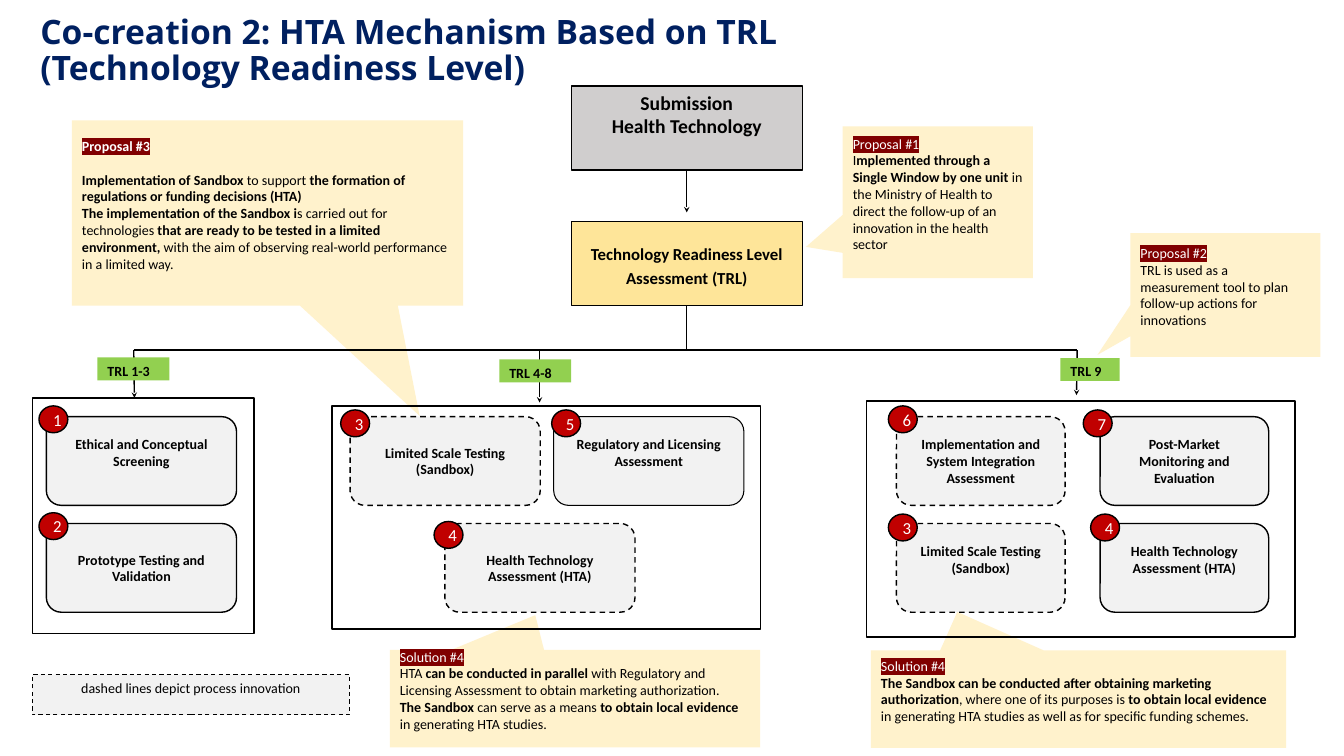
from lxml import etree
from pptx import Presentation, util as u
from pptx.dml.color import RGBColor
from pptx.enum import dml, shapes, text
from pptx.oxml import ns

W, H = 20, 11.25
KIND, MID, TOP = shapes.MSO_SHAPE, text.MSO_ANCHOR.MIDDLE, text.MSO_ANCHOR.TOP
LEFT, MIDX = text.PP_ALIGN.LEFT, text.PP_ALIGN.CENTER
INK, WHITE, NAVY, GREY = "000000", "FFFFFF", "002060", "F2F2F2"
CREAM, MAROON, RED, GREEN = "FFF2CC", "800000", "C00000", "92D050"
PADX, PADY, LINE = 0.15, 0.07, 0.25  # LINE: height of one 15 pt line

TITLE = "Co-creation 2: HTA Mechanism Based on TRL (Technology Readiness Level)"

# Text between ** marks is bold.
# heading, body, place, pointer, gap under the heading
NOTES = [
    ("Proposal #1",
     ["I**mplemented through a Single Window by one unit **in the Ministry of Health "
      "to direct the follow-up of an innovation in the health sector"],
     (12.54, 1.88, 2.83, 2.26), (-0.693, 0.294), 0),
    ("Solution #4",
     ["**The Sandbox can be conducted after obtaining marketing authorization**, where one "
      "of its purposes is **to obtain local evidence** in generating HTA studies as well as "
      "for specific funding schemes."],
     (12.96, 9.68, 6.18, 1.45), (-0.292, -0.896), 0),
    ("**Proposal #3**",
     ["**Implementation of Sandbox **to support** the formation of regulations or funding "
      "decisions (HTA)**",
      "**The implementation of the Sandbox i**s carried out for technologies** that are ready "
      "to be tested in a limited environment, **with the aim of observing real-world "
      "performance in a limited way."],
     (1.07, 1.79, 5.82, 2.76), (0.389, 1.094), 18),
    ("Solution #4",
     ["HTA **can be conducted in parallel** with Regulatory and Licensing Assessment to "
      "obtain marketing authorization.",
      "**The Sandbox **can serve as a means **to obtain local evidence** in generating "
      "HTA studies."],
     (5.8, 9.67, 5.51, 1.45), (-0.107, -0.856), 0),
    ("Proposal #2",
     ["TRL is used as a measurement tool to plan follow-up actions for innovations"],
     (16.82, 3.47, 2.83, 1.84), (-0.673, 0.485), 0),
]

# label, tag place, frame, card width, cards
# card: number, wording, column x, row, dashed, lifted by half a line, badge place
STAGES = [
    ("TRL 1-3", (1.45, 5.32, 1.07), (0.48, 5.92, 3.3, 3.51), 2.83, [
        (1, "Ethical and Conceptual Screening", 0.69, 0, False, True, (0.58, 6.04)),
        (2, "Prototype Testing and Validation", 0.69, 1, False, False, (0.58, 7.63))]),
    ("TRL 4-8", (7.43, 5.35, 1.07), (4.94, 6.04, 6.38, 3.32), 2.83, [
        (3, "Limited Scale Testing (Sandbox)", 5.21, 0, True, False, (5.07, 6.1)),
        (5, "Regulatory and Licensing Assessment", 8.24, 0, False, True, (8.21, 6.1)),
        (4, "Health Technology Assessment (HTA)", 6.62, 1, True, False, (6.46, 7.76))]),
    ("TRL 9", (15.78, 5.33, 0.88), (12.89, 5.97, 6.38, 3.51), 2.51, [
        (6, "Implementation and System Integration Assessment", 13.34, 0, True, False,
         (13.22, 6.04)),
        (7, "Post-Market Monitoring and Evaluation", 16.37, 0, False, False, (16.12, 6.1)),
        (3, "Limited Scale Testing (Sandbox)", 13.34, 1, True, True, (13.22, 7.65)),
        (4, "Health Technology Assessment (HTA)", 16.37, 1, False, True, (16.23, 7.65))]),
]
ROWS = (6.2, 7.79)

STEM, BUS = 10.22, 5.21
# start, end, arrow
LINES = [
    ((STEM, 2.53), (STEM, 3.16), True),
    ((STEM, 4.55), (STEM, BUS), False),
    ((1.99, BUS), (16.03, BUS), False),
    ((1.99, BUS), (2, 5.92), True),
    ((8.03, BUS), (8.03, 5.99), True),
    ((16.03, BUS), (16.02, 5.88), True),
]

deck = Presentation()
deck.slide_width, deck.slide_height = u.Inches(W), u.Inches(H)
slide = deck.slides.add_slide(deck.slide_layouts[5])


def paint(target, shade):
    target.solid()
    target.fore_color.rgb = RGBColor.from_string(shade)


def assign(item, values):
    for name, value in values.items():
        setattr(item, name, value)


def write(frame, lines, size=15, color=INK, align=LEFT, anchor=MID, lift=0,
          font="Calibri", **form):
    """Fill a text frame; lift adds room below the text, in inches."""
    assign(frame, dict(word_wrap=True, vertical_anchor=anchor,
                       margin_left=u.Inches(PADX), margin_right=u.Inches(PADX),
                       margin_top=u.Inches(PADY), margin_bottom=u.Inches(PADY + lift)))
    for i, line in enumerate(lines):
        para = frame.add_paragraph() if i else frame.paragraphs[0]
        assign(para, dict(alignment=align, **form))
        for j, part in enumerate(line.split("**")):
            if part:
                run = para.add_run()
                run.text = part
                paint(run.font.fill, color)
                assign(run.font, dict(size=u.Pt(size), name=font, bold=j % 2 == 1))


def mark(para, shade):
    """Highlight a paragraph and set its text white."""
    for run in para.runs:
        paint(run.font.fill, WHITE)
        glow = etree.Element(ns.qn("a:highlight"))
        etree.SubElement(glow, ns.qn("a:srgbClr"), val=shade)
        run.font._element.find(ns.qn("a:solidFill")).addnext(glow)


def draw(kind, place, fill=None, line=None, dash=False):
    item = slide.shapes.add_shape(kind, *map(u.Inches, place))
    item.shadow.inherit = False
    if fill:
        paint(item.fill, fill)
    else:
        item.fill.background()
    if line:
        paint(item.line.fill, INK)
        item.line.width = u.Pt(line)
        if dash:
            item.line.dash_style = dml.MSO_LINE.DASH
    else:
        item.line.fill.background()
    return item


def join(start, end, arrow):
    wire = slide.shapes.add_connector(shapes.MSO_CONNECTOR.STRAIGHT,
                                      *map(u.Inches, start + end))
    paint(wire.line.fill, INK)
    wire.line.width = u.Pt(1.5)
    if arrow:
        etree.SubElement(wire.line._get_or_add_ln(), ns.qn("a:tailEnd"), type="stealth")
    etree.SubElement(wire._element.spPr, ns.qn("a:effectLst"))


def note(head, body, place, tip, gap):
    item = draw(KIND.RECTANGULAR_CALLOUT, place, CREAM)
    item.adjustments[0], item.adjustments[1] = tip
    write(item.text_frame, [head, *body], lift=LINE)
    first = item.text_frame.paragraphs[0]
    first.space_after = u.Pt(gap)
    mark(first, MAROON)


def card(wide, number, words, x, row, dash, lift, spot):
    line = 1.13 if number == 5 else 1.5
    box = draw(KIND.ROUNDED_RECTANGLE, (x, ROWS[row], wide, 1.32), GREY, line, dash)
    write(box.text_frame, [f"**{words}**"], align=MIDX, lift=LINE * lift)
    dot = draw(KIND.OVAL, (*spot, 0.43, 0.4), RED, 1.5)
    write(dot.text_frame, [str(number)], 18, WHITE, MIDX)


head = slide.shapes.title
assign(head, dict(zip(("left", "top", "width", "height"),
                      map(u.Inches, (0.5, 0.14, 12.39, 1.25)))))
write(head.text_frame, [f"**{TITLE}**"], 36, NAVY, font="Open Sans", line_spacing=0.9)
assign(head.text_frame, dict(margin_left=u.Inches(0.1), margin_right=u.Inches(0.1)))

entry = draw(KIND.RECTANGLE, (8.5, 1.28, 3.44, 1.25), "D0CECE", 1.13)
write(entry.text_frame, ["**Submission**", "**Health Technology**"], 21, align=MIDX, anchor=TOP)
check = draw(KIND.RECTANGLE, (8.5, 3.3, 3.44, 1.25), "FEE599", 1.13)
write(check.text_frame, ["**Technology Readiness Level Assessment (TRL)**"], 18,
      align=MIDX, line_spacing=1.2)

for row in NOTES:
    note(*row)
for row in LINES:
    join(*row)
for label, spot, frame, wide, cards in STAGES:
    draw(KIND.RECTANGLE, frame, line=1.5)
    tag = draw(KIND.RECTANGLE, (*spot, 0.34), GREEN)
    write(tag.text_frame, [f"**{label}**"], anchor=TOP)
    for row in cards:
        card(wide, *row)

key = draw(KIND.RECTANGLE, (0.48, 10.04, 4.72, 0.6), GREY, 1.13, True)
write(key.text_frame, ["dashed lines depict process innovation"], align=MIDX, anchor=TOP)

deck.save("out.pptx")
